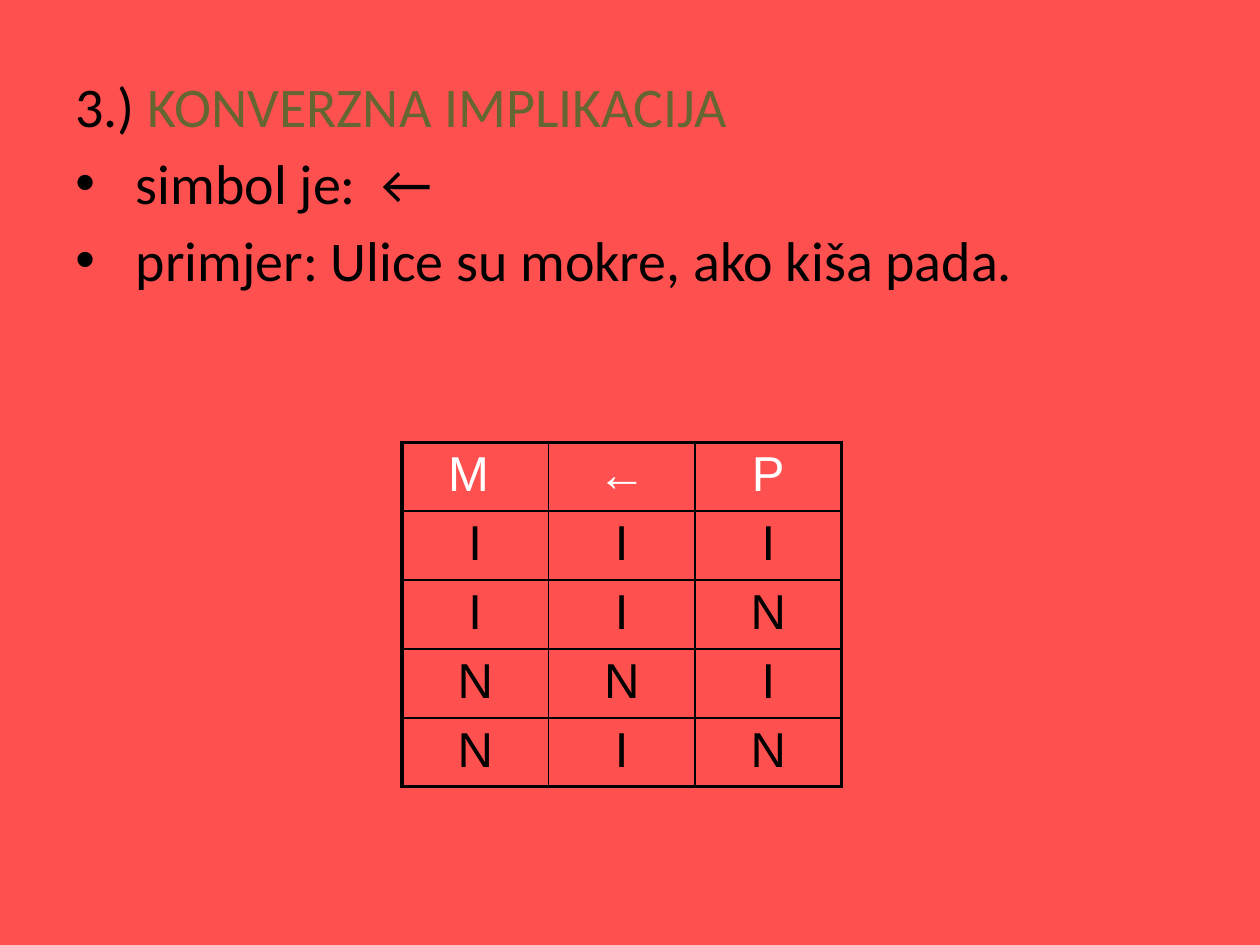
from typing import NamedTuple

from lxml.etree import SubElement
from pptx import Presentation
from pptx.dml.color import RGBColor
from pptx.enum.text import PP_ALIGN as Align
from pptx.oxml.ns import qn
from pptx.util import Inches, Pt

BLACK, WHITE, OLIVE, CORAL = "000000", "FFFFFF", "666633", "FF5050"
INNER, OUTER = 1, 2.25


class Span(NamedTuple):
    text: str
    color: str = BLACK


class Line(NamedTuple):
    spans: tuple[Span, ...]
    indent: float = 0.38
    bullet: bool = True


LINES = (
    Line((Span("3.) "), Span("KONVERZNA IMPLIKACIJA", OLIVE)), bullet=False),
    Line((Span("simbol je:  ←"),), indent=0.48),
    Line((Span("primjer: Ulice su mokre, ako kiša pada."),), indent=0.48),
)
TRUTH_TABLE = (
    ("M ", "←", "P"),
    ("I", "I", "I"),
    ("I", "I", "N"),
    ("N", "N", "I"),
    ("N", "I", "N"),
)


def rgb(color: str) -> RGBColor:
    return RGBColor.from_string(color)


def add_text(paragraph, text: str, *, size: float, font: str, color: str = BLACK) -> None:
    run = paragraph.add_run()
    run.text = text
    run.font.size = Pt(size)
    run.font.name = font
    run.font.color.rgb = rgb(color)


def set_indent(paragraph, indent: float, bullet: bool) -> None:
    """Hang the first line, with or without a bullet."""
    props = paragraph._p.get_or_add_pPr()
    props.set("marL", str(Inches(indent)))
    props.set("indent", str(-Inches(indent)))
    if bullet:
        SubElement(props, qn("a:buFont"), typeface="Arial")
        SubElement(props, qn("a:buChar"), char="•")
    else:
        SubElement(props, qn("a:buNone"))


def add_definition(slide, lines: tuple[Line, ...]) -> None:
    box = slide.shapes.add_textbox(Inches(0.5), Inches(0.52), Inches(9), Inches(2.05))
    frame = box.text_frame
    frame.word_wrap = True
    for index, line in enumerate(lines):
        paragraph = frame.add_paragraph() if index else frame.paragraphs[0]
        paragraph.space_before = Pt(5.5)
        set_indent(paragraph, line.indent, line.bullet)
        for span in line.spans:
            add_text(paragraph, span.text, size=32, font="Calibri", color=span.color)


def set_borders(cell, widths: dict[str, float]) -> None:
    props = cell._tc.get_or_add_tcPr()
    for side, width in widths.items():
        border = SubElement(props, qn(f"a:ln{side}"), w=str(Pt(width)))
        fill = SubElement(border, qn("a:solidFill"))
        SubElement(fill, qn("a:srgbClr"), val=BLACK)


def add_truth_table(slide, rows: tuple[tuple[str, ...], ...]) -> None:
    last_row, last_col = len(rows) - 1, len(rows[0]) - 1
    table = slide.shapes.add_table(
        len(rows), len(rows[0]), Inches(3.19), Inches(3.51), Inches(3.49), Inches(2.67)
    ).table
    table.first_row = table.horz_banding = False
    for r, values in enumerate(rows):
        for c, value in enumerate(values):
            cell = table.cell(r, c)
            cell.margin_top = cell.margin_bottom = Inches(0.04)
            set_borders(cell, {
                "L": OUTER if c == 0 else INNER,
                "R": OUTER if c == last_col else INNER,
                "T": OUTER if r == 0 else INNER,
                "B": OUTER if r == last_row else INNER,
            })
            cell.fill.background()
            paragraph = cell.text_frame.paragraphs[0]
            paragraph.alignment = Align.CENTER
            add_text(paragraph, value, size=28, font="Arial", color=BLACK if r else WHITE)


def main() -> None:
    deck = Presentation()
    deck.slide_width, deck.slide_height = Inches(10), Inches(7.5)
    slide = deck.slides.add_slide(deck.slide_layouts[6])
    background = slide.background.fill
    background.solid()
    background.fore_color.rgb = rgb(CORAL)
    add_definition(slide, LINES)
    add_truth_table(slide, TRUTH_TABLE)
    deck.save("out.pptx")


if __name__ == "__main__":
    main()
